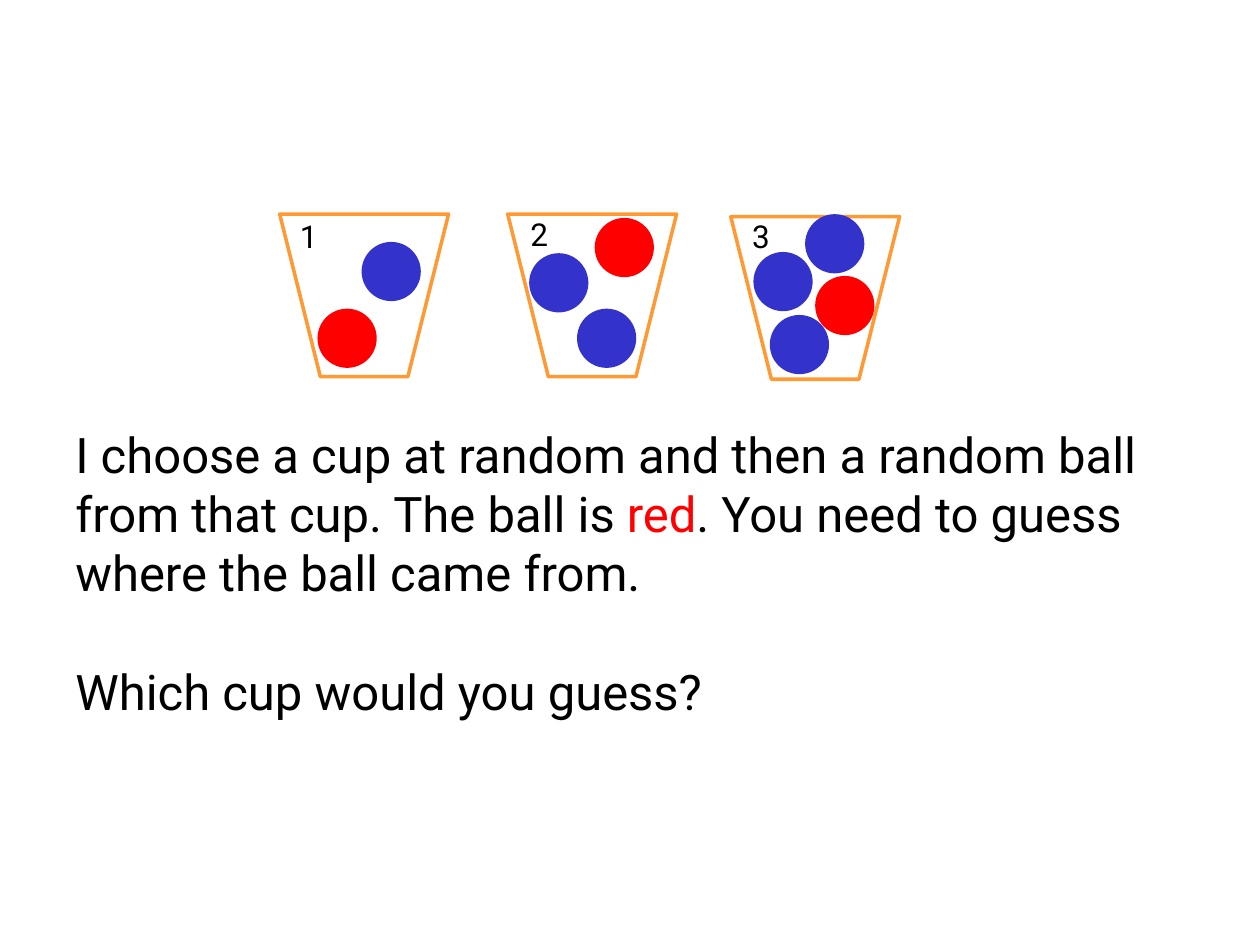
from pptx import Presentation
from pptx import util as u
from pptx.dml.color import RGBColor
from pptx.enum import shapes, text

PX = 9144  # EMU per px, 100 px to the inch
FONT = "Roboto"
BLACK, RED, BLUE, ORANGE = "000000", "FF0000", "3333CC", "FF9933"
CUP_WIDTH, CUP_HEIGHT, BALL, LABEL = 134, 129, 47, 50

# Each cup: left, top, number, label offset, balls as (x, y, colour) in the cup
CUPS = [
    (222, 170, "1", (-2, -8), [(30, 75, RED), (65, 22, BLUE)]),
    (403, 170, "2", (0, -9), [(55, 75, BLUE), (69, 3, RED), (17, 31, BLUE)]),
    (580, 172, "3", (-1, -10),
     [(67, 47, RED), (59, -2, BLUE), (18, 28, BLUE), (31, 78, BLUE)]),
]


def color(hex_string):
    return RGBColor.from_string(hex_string)


def emu(*lengths):
    return [u.Emu(length * PX) for length in lengths]


def format_run(run, size, hex_string=BLACK):
    run.font.name = FONT
    run.font.size = u.Pt(size)
    run.font.color.rgb = color(hex_string)


def add_shape(slide, kind, box, fill=None, line=None):
    shape = slide.shapes.add_shape(kind, *emu(*box))
    shape.shadow.inherit = False
    if fill:
        shape.fill.solid()
        shape.fill.fore_color.rgb = color(fill)
    else:
        shape.fill.background()
    if line:
        shape.line.color.rgb = color(line)
        shape.line.width = u.Pt(2)
    else:
        shape.line.fill.background()
    return shape


def add_cup(slide, left, top, number, label_offset, balls):
    # Cup, wide end up
    cup = add_shape(slide, shapes.MSO_SHAPE.TRAPEZOID,
                    (left, top, CUP_WIDTH, CUP_HEIGHT), line=ORANGE)
    cup.element.spPr.xfrm.set("flipV", "1")

    # Balls
    for x, y, fill in balls:
        add_shape(slide, shapes.MSO_SHAPE.OVAL,
                  (left + x, top + y, BALL, BALL), fill=fill)

    # Number
    x, y = label_offset
    label = add_shape(slide, shapes.MSO_SHAPE.OVAL,
                      (left + x, top + y, LABEL, LABEL))
    frame = label.text_frame
    frame.margin_left = frame.margin_right = 0
    frame.margin_top = frame.margin_bottom = 0
    frame.vertical_anchor = text.MSO_ANCHOR.MIDDLE
    frame.text = number
    paragraph = frame.paragraphs[0]
    paragraph.alignment = text.PP_ALIGN.CENTER
    format_run(paragraph.runs[0], 18)


def add_text(slide, box, parts):
    frame = slide.shapes.add_textbox(*emu(*box)).text_frame
    frame.word_wrap = True
    frame.auto_size = text.MSO_AUTO_SIZE.SHAPE_TO_FIT_TEXT
    for wording, hex_string in parts:
        run = frame.paragraphs[0].add_run()
        run.text = wording
        format_run(run, 28, hex_string)


def main():
    presentation = Presentation()
    presentation.slide_width, presentation.slide_height = emu(1000, 750)
    slide = presentation.slides.add_slide(presentation.slide_layouts[6])

    for cup in CUPS:
        add_cup(slide, *cup)

    # Puzzle and question
    add_text(slide, (50, 332, 900, 151), [
        ("I choose a cup at random and then a random ball from that cup. "
         "The ball is ", BLACK),
        ("red", RED),
        (". You need to guess where the ball came from.", BLACK),
    ])
    add_text(slide, (50, 520, 812, 57), [("Which cup would you guess?", BLACK)])

    presentation.save("out.pptx")


if __name__ == "__main__":
    main()
